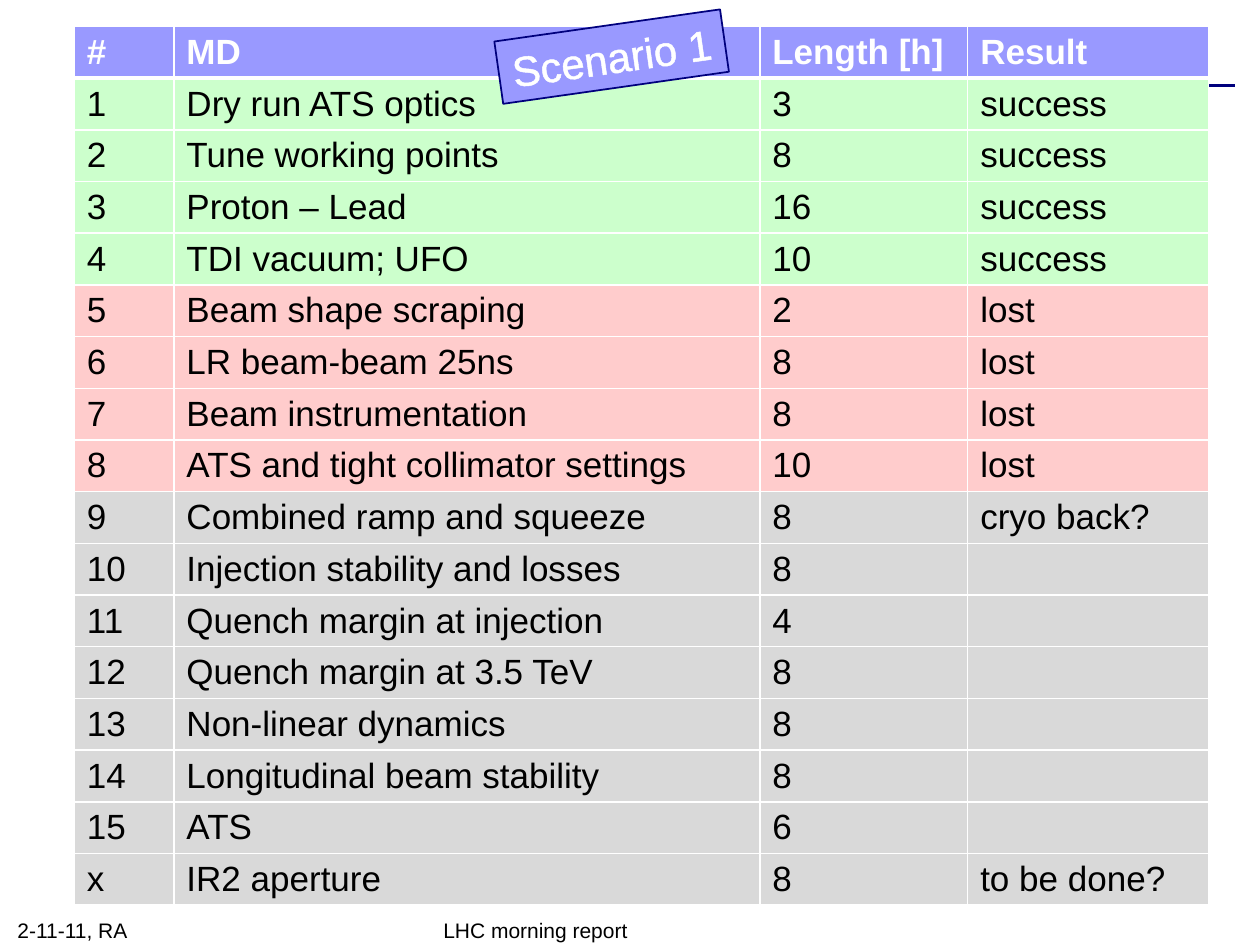
import dataclasses
import lxml.etree
import pptx
import pptx.dml.color
import pptx.enum.shapes
import pptx.enum.text
import pptx.oxml.ns
import pptx.util

Inches = pptx.util.Inches
Pt = pptx.util.Pt
Align = pptx.enum.text.PP_ALIGN
Anchor = pptx.enum.text.MSO_ANCHOR
qn = pptx.oxml.ns.qn

FONT = "Arial"
COLORS = {
    "navy": "00007D", "head": "9999FF", "success": "CCFFCC",
    "lost": "FFCCCC", "open": "D9D9D9", "white": "FFFFFF", "black": "000000",
}


@dataclasses.dataclass
class Row:
    num: str
    name: str
    hours: str
    result: str = ""


@dataclasses.dataclass
class Label:
    text: str
    left: float
    top: float
    width: float
    height: float


HEAD = Row("#", "MD", "Length [h]", "Result")
ROWS = [
    Row("1", "Dry run ATS optics", "3", "success"),
    Row("2", "Tune working points", "8", "success"),
    Row("3", "Proton – Lead", "16", "success"),
    Row("4", "TDI vacuum; UFO", "10", "success"),
    Row("5", "Beam shape scraping", "2", "lost"),
    Row("6", "LR beam-beam 25ns", "8", "lost"),
    Row("7", "Beam instrumentation", "8", "lost"),
    Row("8", "ATS and tight collimator settings", "10", "lost"),
    Row("9", "Combined ramp and squeeze", "8", "cryo back?"),
    Row("10", "Injection stability and losses", "8"),
    Row("11", "Quench margin at injection", "4"),
    Row("12", "Quench margin at 3.5 TeV", "8"),
    Row("13", "Non-linear dynamics", "8"),
    Row("14", "Longitudinal beam stability", "8"),
    Row("15", "ATS", "6"),
    Row("x", "IR2 aperture", "8", "to be done?"),
]
WIDTHS = [0.79, 4.65, 1.65, 1.91]
FOOTS = [
    Label("2-11-11, RA", 0.04, 7.24, 2.33, 0.29),
    Label("LHC morning report", 3.42, 7.25, 3.17, 0.28),
]
BADGE = Label("Scenario 1", 3.95, 0.2, 1.81, 0.5)


def color(key: str) -> pptx.dml.color.RGBColor:
    return pptx.dml.color.RGBColor.from_string(COLORS[key])


def apply(target, values: dict) -> None:
    for name, value in values.items():
        setattr(target, name, value)


def write(frame, text: str, size: int, ink: str, bold: bool = False, align=Align.LEFT) -> None:
    para = frame.paragraphs[0]
    para.alignment = align
    if text:
        run = para.add_run()
        run.text = text
        apply(run.font, {"name": FONT, "size": Pt(size), "bold": bold})
        run.font.color.rgb = color(ink)
    else:
        end = lxml.etree.SubElement(para._p, qn("a:endParaRPr"), sz=str(size * 100))
        lxml.etree.SubElement(end, qn("a:latin"), typeface=FONT)


def stroke(parent, tag: str, width: float, key: str):
    line = lxml.etree.SubElement(parent, qn(tag), w=str(Pt(width)))
    fill = lxml.etree.SubElement(line, qn("a:solidFill"))
    lxml.etree.SubElement(fill, qn("a:srgbClr"), val=COLORS[key])
    return line


def draw_cell(cell, text: str, fill: str, row: int) -> None:
    first = row == 0
    props = cell._tc.get_or_add_tcPr()
    sides = {"L": 1, "R": 1, "T": 3 if row == 1 else 1, "B": 3 if first else 1}
    for side, width in sides.items():
        stroke(props, f"a:ln{side}", width, "white")
    cell.fill.solid()
    cell.fill.fore_color.rgb = color(fill)
    write(cell.text_frame, text, 20, "white" if first else "black", first)


def draw_table(shapes, rows: list[Row]) -> None:
    high = 0.41
    frame = shapes.add_table(
        len(rows), len(WIDTHS), Inches(0.59), Inches(0.21),
        Inches(sum(WIDTHS)), Inches(high * len(rows)))
    table = frame.table
    for col, width in zip(table.columns, WIDTHS):
        col.width = Inches(width)
    for i, row in enumerate(rows):
        table.rows[i].height = Inches(high)
        fill = row.result if row.result in COLORS else "open"
        if i == 0:
            fill = "head"
        for j, text in enumerate(dataclasses.astuple(row)):
            draw_cell(table.cell(i, j), text, fill, i)


def place(label: Label) -> list:
    return [Inches(n) for n in (label.left, label.top, label.width, label.height)]


def draw_foot(shapes, label: Label) -> None:
    frame = shapes.add_textbox(*place(label)).text_frame
    apply(frame, {"word_wrap": True, "vertical_anchor": Anchor.BOTTOM})
    write(frame, label.text, 12, "black")


def draw_badge(shapes, label: Label) -> None:
    shape = shapes.add_shape(pptx.enum.shapes.MSO_SHAPE.RECTANGLE, *place(label))
    shape.shadow.inherit = False
    shape.rotation = 351.9
    shape.fill.solid()
    shape.fill.fore_color.rgb = color("head")
    shape.line.color.rgb = color("navy")
    shape.line.width = Pt(1)
    frame = shape.text_frame
    apply(frame, {
        "word_wrap": False, "vertical_anchor": Anchor.MIDDLE,
        "auto_size": pptx.enum.text.MSO_AUTO_SIZE.SHAPE_TO_FIT_TEXT,
    })
    write(frame, label.text, 24, "white", align=Align.CENTER)
    props = frame.paragraphs[0].runs[0]._r.get_or_add_rPr()
    props.insert(0, stroke(props, "a:ln", 1.45, "white"))


def draw_rule(shapes) -> None:
    rule = shapes.add_connector(
        pptx.enum.shapes.MSO_CONNECTOR.STRAIGHT,
        Inches(0.75), Inches(0.68), Inches(9.8), Inches(0.68))
    rule.line.color.rgb = color("navy")
    rule.line.width = Pt(2)
    lxml.etree.SubElement(rule._element.spPr, qn("a:effectLst"))


def main() -> None:
    deck = pptx.Presentation()
    apply(deck, {"slide_width": Inches(10), "slide_height": Inches(7.5)})
    shapes = deck.slides.add_slide(deck.slide_layouts[6]).shapes
    draw_rule(shapes)
    draw_table(shapes, [HEAD, *ROWS])
    for foot in FOOTS:
        draw_foot(shapes, foot)
    draw_badge(shapes, BADGE)
    deck.save("out.pptx")


if __name__ == "__main__":
    main()
